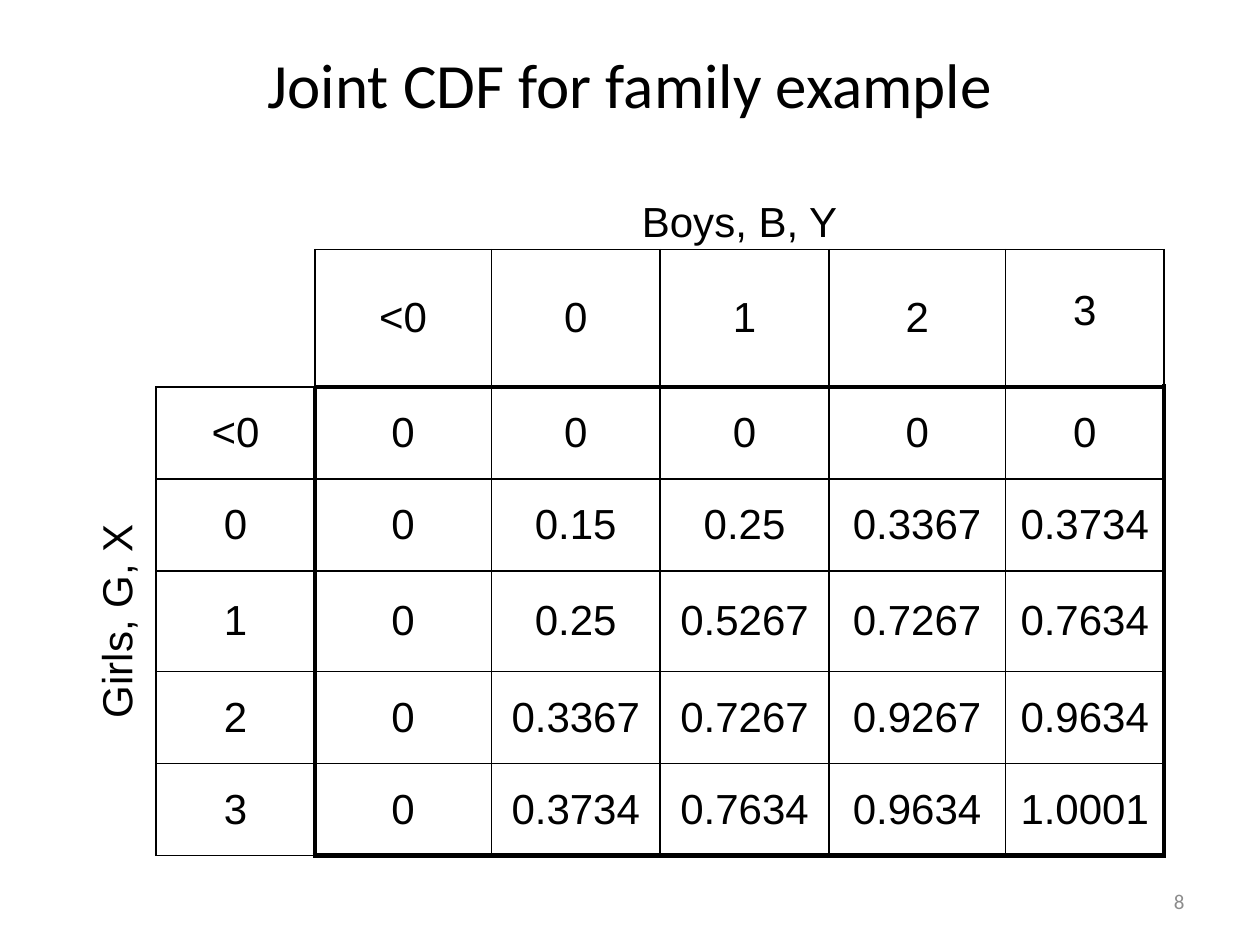
"""Build the joint CDF slide with its bordered table."""
from dataclasses import dataclass

from lxml.etree import SubElement
from pptx import Presentation
from pptx.dml.color import RGBColor
from pptx.enum.text import MSO_ANCHOR, PP_ALIGN
from pptx.oxml.ns import qn
from pptx.slide import Slide
from pptx.table import Table, _Cell
from pptx.util import Inches, Pt

BLACK = RGBColor(0x00, 0x00, 0x00)
GRAY = RGBColor(0x8C, 0x8C, 0x8C)
WIDTHS = (0.49, 1.26, 1.4, 1.34, 1.34, 1.4, 1.26)
HEIGHTS = (0.36, 1.09, 0.73, 0.73, 0.8, 0.73, 0.73)
LEVELS = ("<0", "0", "1", "2", "3")
VALUES = (
    ("0", "0", "0", "0", "0"),
    ("0", "0.15", "0.25", "0.3367", "0.3734"),
    ("0", "0.25", "0.5267", "0.7267", "0.7634"),
    ("0", "0.3367", "0.7267", "0.9267", "0.9634"),
    ("0", "0.3734", "0.7634", "0.9634", "1.0001"),
)
SIDES = {"lnL": (0, -1), "lnR": (0, 1), "lnT": (-1, 0), "lnB": (1, 0)}


@dataclass(frozen=True)
class Label:
    """Hold a line of text with its box and look."""

    text: str
    left: float
    top: float
    width: float
    height: float
    size: int
    color: RGBColor
    align: PP_ALIGN


LABELS = (
    Label("Joint CDF for family example", 0, 0, 10, 1.33, 36, BLACK, PP_ALIGN.CENTER),
    Label("8", 7.17, 6.95, 2.33, 0.4, 12, GRAY, PP_ALIGN.RIGHT),
)


def write(frame, text: str, size: int, font: str, color: RGBColor, align: PP_ALIGN) -> None:
    """Write one styled run into the first paragraph."""
    line = frame.paragraphs[0]
    line.alignment = align
    run = line.add_run()
    run.text = text
    run.font.size = Pt(size)
    run.font.name = font
    run.font.color.rgb = color


def draw_label(slide: Slide, label: Label) -> None:
    """Draw a text box that is centred from top to bottom."""
    box = slide.shapes.add_textbox(
        Inches(label.left), Inches(label.top), Inches(label.width), Inches(label.height)
    )
    frame = box.text_frame
    frame.word_wrap = True
    frame.vertical_anchor = MSO_ANCHOR.MIDDLE
    write(frame, label.text, label.size, "Calibri", label.color, label.align)


def in_body(row: int, col: int) -> bool:
    """Tell whether a cell holds a value."""
    return 2 <= row <= 6 and 2 <= col <= 6


def in_grid(row: int, col: int) -> bool:
    """Tell whether a cell holds a value or a level."""
    return 1 <= row <= 6 and 1 <= col <= 6 and (row, col) != (1, 1)


def weigh(here: tuple[int, int], there: tuple[int, int]) -> int:
    """Return the line width in points between two cells."""
    if in_body(*here) != in_body(*there):
        return 3
    return 1 if in_grid(*here) or in_grid(*there) else 0


def draw_edges(cell: _Cell, row: int, col: int) -> None:
    """Draw the four borders of a cell."""
    props = cell._tc.get_or_add_tcPr()
    for side, (down, right) in SIDES.items():
        width = weigh((row, col), (row + down, col + right))
        edge = SubElement(props, qn(f"a:{side}"), w=str(Pt(width)))
        if width:
            fill = SubElement(edge, qn("a:solidFill"))
            SubElement(fill, qn("a:srgbClr"), val=str(BLACK))
        else:
            SubElement(edge, qn("a:noFill"))


def fill_cell(table: Table, row: int, col: int, text: str) -> _Cell:
    """Write centred text into a cell."""
    cell = table.cell(row, col)
    cell.vertical_anchor = MSO_ANCHOR.MIDDLE
    write(cell.text_frame, text, 24, "Arial", BLACK, PP_ALIGN.CENTER)
    return cell


def draw_table(slide: Slide) -> None:
    """Draw the table of joint values."""
    table = slide.shapes.add_table(
        len(HEIGHTS), len(WIDTHS), Inches(0.75), Inches(1.58),
        Inches(sum(WIDTHS)), Inches(sum(HEIGHTS)),
    ).table
    table.first_row = table.horz_banding = False
    for col, width in enumerate(WIDTHS):
        table.columns[col].width = Inches(width)
    for row, height in enumerate(HEIGHTS):
        table.rows[row].height = Inches(height)
        for col in range(len(WIDTHS)):
            cell = table.cell(row, col)
            cell.margin_left = cell.margin_right = Inches(0.07)
            cell.margin_top = cell.margin_bottom = Inches(0)
            draw_edges(cell, row, col)
            cell.fill.background()
    table.cell(0, 2).merge(table.cell(0, 6))
    table.cell(2, 0).merge(table.cell(6, 0))
    fill_cell(table, 0, 2, "Boys, B, Y").vertical_anchor = MSO_ANCHOR.TOP
    girls = fill_cell(table, 2, 0, "Girls, G, X")
    girls._tc.get_or_add_tcPr().set("vert", "vert270")
    for step, level in enumerate(LEVELS, 2):
        head = fill_cell(table, 1, step, level)
        fill_cell(table, step, 1, level)
    head.vertical_anchor = MSO_ANCHOR.BOTTOM
    head.margin_bottom = Inches(0.42)
    for row, values in enumerate(VALUES, 2):
        for col, value in enumerate(values, 2):
            fill_cell(table, row, col, value)


def main() -> None:
    """Build and save the slide."""
    deck = Presentation()
    deck.slide_width = Inches(10)
    deck.slide_height = Inches(7.5)
    slide = deck.slides.add_slide(deck.slide_layouts[6])
    title, number = LABELS
    draw_label(slide, title)
    draw_table(slide)
    draw_label(slide, number)
    deck.save("out.pptx")


if __name__ == "__main__":
    main()
